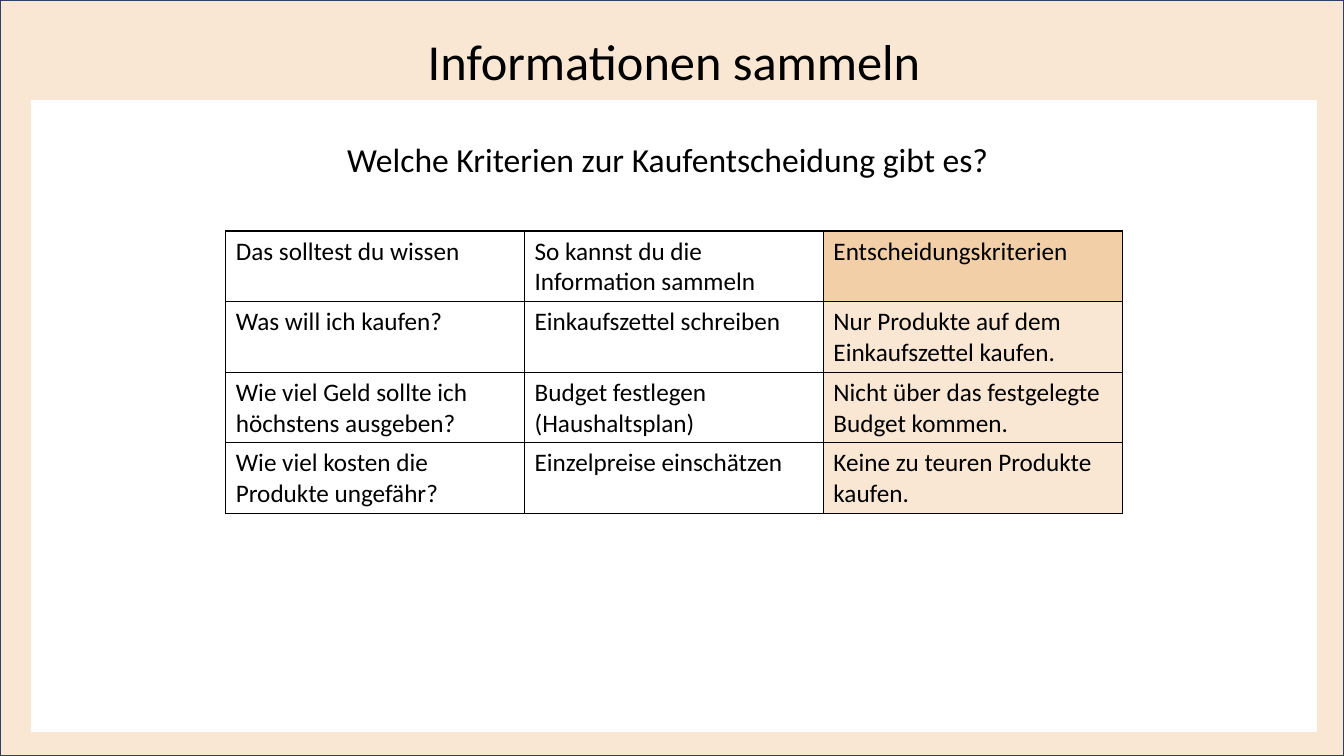
from lxml import etree
from pptx import Presentation
from pptx.dml.color import RGBColor
from pptx.enum.shapes import MSO_SHAPE
from pptx.enum.text import PP_ALIGN
from pptx.oxml.ns import qn
from pptx.util import Cm, Pt

RECTANGLE = MSO_SHAPE.RECTANGLE
CENTER = PP_ALIGN.CENTER
FONT = "Calibri"
BLACK, WHITE = "000000", "FFFFFF"
PEACH, ORANGE, NAVY = "F9E7D3", "F2CFA7", "303F65"


def color(hex_value):
    return RGBColor.from_string(hex_value)


def write(frame, text, size):
    frame.text = text
    for run in frame.paragraphs[0].runs:
        run.font.name = FONT
        run.font.size = Pt(size)
        run.font.color.rgb = color(BLACK)


presentation = Presentation()
presentation.slide_width = Cm(33.87)
presentation.slide_height = Cm(19.05)
slide = presentation.slides.add_slide(presentation.slide_layouts[6])

# Peach frame and white content area
for left, top, width, height, fill, outline in [
    (0, 0, 33.87, 19.05, PEACH, NAVY),
    (0.81, 2.54, 32.36, 15.88, WHITE, WHITE),
]:
    panel = slide.shapes.add_shape(RECTANGLE, Cm(left), Cm(top), Cm(width), Cm(height))
    panel.shadow.inherit = False
    panel.fill.solid()
    panel.fill.fore_color.rgb = color(fill)
    panel.line.color.rgb = color(outline)
    panel.line.width = Pt(1.25)

# Title and question
for left, top, width, height, text, size in [
    (0.81, 0.64, 32.36, 1.8, "Informationen sammeln", 36),
    (1.83, 3.38, 30, 2.31, "Welche Kriterien zur Kaufentscheidung gibt es?", 24),
]:
    heading = slide.shapes.add_textbox(Cm(left), Cm(top), Cm(width), Cm(height))
    heading.text_frame.word_wrap = True
    write(heading.text_frame, text, size)
    heading.text_frame.paragraphs[0].alignment = CENTER

# Table of criteria
criteria = [
    ("Das solltest du wissen", "So kannst du die Information sammeln",
     "Entscheidungskriterien"),
    ("Was will ich kaufen?", "Einkaufszettel schreiben",
     "Nur Produkte auf dem Einkaufszettel kaufen."),
    ("Wie viel Geld sollte ich höchstens ausgeben?", "Budget festlegen (Haushaltsplan)",
     "Nicht über das festgelegte Budget kommen."),
    ("Wie viel kosten die Produkte ungefähr?", "Einzelpreise einschätzen",
     "Keine zu teuren Produkte kaufen."),
]
table = slide.shapes.add_table(
    len(criteria), 3, Cm(5.69), Cm(5.82), Cm(22.59), Cm(7.12)).table
table.first_row = False
table.horz_banding = False
for column in table.columns:
    column.width = Cm(7.53)

for row_index, row in enumerate(criteria):
    for column_index, text in enumerate(row):
        cell = table.cell(row_index, column_index)
        write(cell.text_frame, text, 18)

        # Borders come before the fill in the cell properties
        properties = cell._tc.get_or_add_tcPr()
        for side in ("a:lnL", "a:lnR", "a:lnT", "a:lnB"):
            border = etree.SubElement(properties, qn(side), w=str(Pt(1)))
            solid = etree.SubElement(border, qn("a:solidFill"))
            etree.SubElement(solid, qn("a:srgbClr"), val=BLACK)

        # Only the last column is tinted
        if column_index == 2:
            cell.fill.solid()
            cell.fill.fore_color.rgb = color(ORANGE if row_index == 0 else PEACH)
        else:
            cell.fill.background()

presentation.save("out.pptx")
